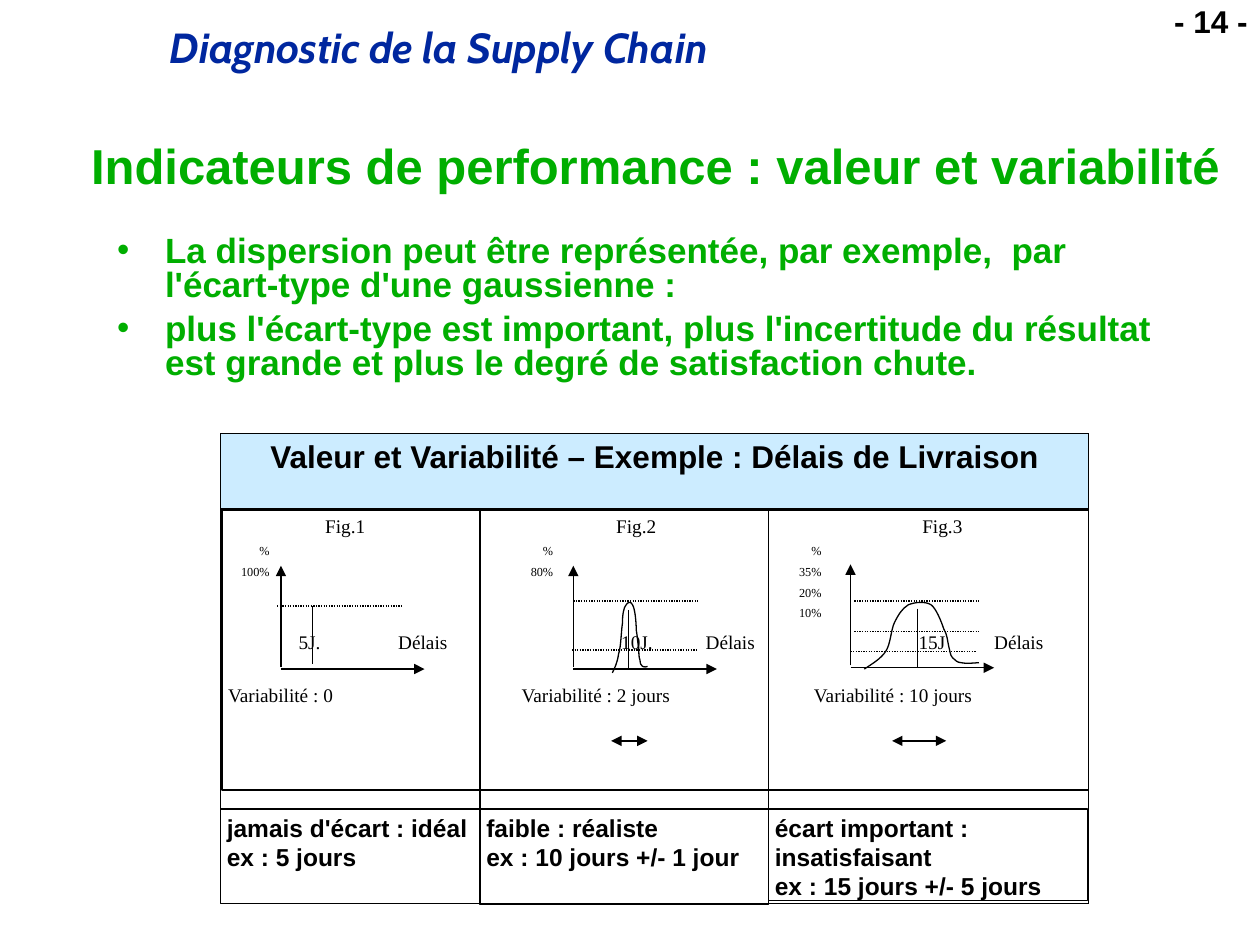
import pptx
import pptx.util
import pptx.dml.color
import pptx.enum.dml
import pptx.enum.shapes
import pptx.enum.text
from lxml import etree
from pptx.oxml.ns import qn

Inches, Pt = pptx.util.Inches, pptx.util.Pt
RGBColor = pptx.dml.color.RGBColor
ALIGN = pptx.enum.text.PP_ALIGN
ANCHOR = pptx.enum.text.MSO_ANCHOR

BLACK = RGBColor(0x00, 0x00, 0x00)
WHITE = RGBColor(0xFF, 0xFF, 0xFF)
NAVY = RGBColor(0x00, 0x27, 0x9F)
GREEN = RGBColor(0x00, 0xAE, 0x00)
PALE_BLUE = RGBColor(0xCC, 0xEC, 0xFF)

COURSE = "Diagnostic de la Supply Chain"
PAGE = "- 14 -"
TITLE = "Indicateurs de performance : valeur et variabilité"
POINTS = [
    "La dispersion peut être représentée, par exemple,  par l'écart-type d'une gaussienne :",
    "plus l'écart-type est important, plus l'incertitude du résultat "
    "est grande et plus le degré de satisfaction chute.",
]
PANEL_HEADING = "Valeur et Variabilité – Exemple : Délais de Livraison"

# Conclusions under each figure, with the height of their cell
CONCLUSIONS = [
    (["jamais d'écart : idéal", "ex : 5 jours"], 0.75),
    (["faible : réaliste", "ex : 10 jours +/- 1 jour"], 0.76),
    (["écart important : insatisfaisant", "ex : 15 jours +/- 5 jours"], 0.73),
]

# Rows of figure labels: text, size, space before, tab stops, tab alignment
PERCENT_TABS = [0.33, 2.58, 4.71]
LABEL_ROWS = [
    ("\tFig.1\tFig.2\tFig.3", 11, 0, [0.77, 3.08, 5.51], "l"),
    ("\t%\t%\t%", 7, 3.5, PERCENT_TABS, "r"),
    ("\t100%\t80%\t35%", 7, 3.5, PERCENT_TABS, "r"),
    ("\t20%", 7, 3.5, PERCENT_TABS[2:], "r"),
    ("\t10%", 7, 3.5, PERCENT_TABS[2:], "r"),
    ("\t5J.\tDélais\t10J.\tDélais\t15J\tDélais", 11, 5.5,
     [0.56, 1.35, 3.12, 3.79, 5.48, 6.08], "l"),
    ("Variabilité : 0\tVariabilité : 2 jours\tVariabilité : 10 jours", 11, 17.5, [2.33, 4.65], "l"),
]

# Bell curves: a start point, then Bézier triples
NARROW_BELL = [
    (4.86, 5.34), (4.88, 5.3), (4.9, 5.26), (4.91, 5.19), (4.93, 5.13), (4.93, 5.01),
    (4.94, 4.95), (4.94, 4.88), (4.95, 4.82), (4.97, 4.8), (4.98, 4.78), (5.01, 4.77),
    (5.02, 4.8), (5.04, 4.83), (5.05, 4.94), (5.05, 5), (5.06, 5.05), (5.06, 5.1),
    (5.07, 5.14), (5.07, 5.18), (5.07, 5.22), (5.08, 5.24), (5.08, 5.27), (5.09, 5.28),
    (5.1, 5.29), (5.11, 5.3), (5.13, 5.29), (5.14, 5.29),
]
WIDE_BELL = [
    (6.86, 5.31), (6.92, 5.27), (6.99, 5.23), (7.03, 5.17), (7.07, 5.11), (7.07, 5),
    (7.1, 4.94), (7.13, 4.88), (7.16, 4.83), (7.21, 4.8), (7.26, 4.78), (7.34, 4.77),
    (7.39, 4.8), (7.43, 4.83), (7.47, 4.93), (7.49, 4.99), (7.52, 5.04), (7.52, 5.09),
    (7.53, 5.13), (7.54, 5.16), (7.54, 5.2), (7.56, 5.22), (7.58, 5.24), (7.6, 5.26),
    (7.63, 5.26), (7.67, 5.27), (7.75, 5.26), (7.77, 5.26),
]
# Origin of the axes, peak (x, top), starts of the 1-inch dotted levels, bell, spread arrow
FIGURES = [
    dict(origin=(2.23, 5.31), peak=(2.48, 4.81), levels=[(2.2, 4.81)], bell=None, spread=None),
    dict(origin=(4.55, 5.31), peak=(4.99, 4.84), levels=[(4.55, 4.77), (4.54, 5.16)],
         bell=NARROW_BELL, spread=(4.85, 5.14)),
    dict(origin=(6.75, 5.3), peak=(7.28, 4.83),
         levels=[(6.78, 4.77), (6.75, 5.17), (6.78, 5.01)],
         bell=WIDE_BELL, spread=(7.08, 7.51)),
]

LEFT, RIGHT, TOP, BOTTOM = 1.75, 8.64, 3.44, 7.17
FIGURES_TOP, CONCLUSIONS_TOP = 4.04, 6.42
COLUMNS = [LEFT, 3.81, 6.1, 8.63]

prs = pptx.Presentation()
prs.slide_width, prs.slide_height = Inches(10), Inches(7.5)
slide = prs.slides.add_slide(prs.slide_layouts[1])
shapes = slide.shapes


def write(shape, lines, size, color=BLACK, font="Arial", bold=True, italic=False,
          align=ALIGN.LEFT, anchor=ANCHOR.TOP, spacing=1.0, before=0, margins=(0.1, 0.05),
          wrap=True):
    frame = shape.text_frame
    frame.auto_size = pptx.enum.text.MSO_AUTO_SIZE.NONE
    frame.word_wrap = wrap
    frame.vertical_anchor = anchor
    frame.margin_left = frame.margin_right = Inches(margins[0])
    frame.margin_top = frame.margin_bottom = Inches(margins[1])
    frame.text = "\n".join(lines)
    for paragraph in frame.paragraphs:
        paragraph.alignment = align
        paragraph.line_spacing = spacing
        paragraph.space_before = Pt(before)
        style = paragraph.runs[0].font
        style.name, style.size = font, Pt(size)
        style.bold, style.italic = bold, italic
        style.color.rgb = color
    return frame.paragraphs


def place(shape, *box):
    shape.left, shape.top, shape.width, shape.height = map(Inches, box)
    return shape


def draw_box(left, top, width, height, fill=None, weight=0.75):
    box = shapes.add_shape(pptx.enum.shapes.MSO_SHAPE.RECTANGLE,
                           *map(Inches, (left, top, width, height)))
    box.shadow.inherit = False
    if fill is None:
        box.fill.background()
    else:
        box.fill.solid()
        box.fill.fore_color.rgb = fill
    box.line.color.rgb = BLACK
    box.line.width = Pt(weight)
    return box


def draw_line(start, end, weight=0.75, dotted=False, arrows=()):
    """Arrows holds headEnd and/or tailEnd, in that order."""
    line = shapes.add_connector(pptx.enum.shapes.MSO_CONNECTOR.STRAIGHT,
                                *map(Inches, (*start, *end)))
    line.line.color.rgb = BLACK
    line.line.width = Pt(weight)
    if dotted:
        line.line.dash_style = pptx.enum.dml.MSO_LINE.ROUND_DOT
    properties = line._element.spPr
    for arrow in arrows:
        etree.SubElement(properties.find(qn("a:ln")), qn("a:" + arrow), type="triangle")
    etree.SubElement(properties, qn("a:effectLst"))


def draw_curve(points):
    """Build an outline through all points, then turn each three steps into one Bézier."""
    start, *rest = [(Inches(x), Inches(y)) for x, y in points]
    builder = shapes.build_freeform(*start)
    builder.add_line_segments(rest, close=False)
    curve = builder.convert_to_shape()
    steps = list(curve._element.iter(qn("a:lnTo")))
    for i in range(0, len(steps), 3):
        bezier = etree.SubElement(steps[i].getparent(), qn("a:cubicBezTo"))
        for step in steps[i:i + 3]:
            bezier.append(step[0])
            step.getparent().remove(step)
    curve.shadow.inherit = False
    curve.fill.background()
    curve.line.color.rgb = BLACK
    curve.line.width = Pt(0.75)


# Headings and bullets
write(shapes.add_textbox(*map(Inches, (1.25, 0.17, 8.08, 0.46))), [COURSE], 24,
      color=NAVY, font="Cabin", italic=True, spacing=0.9)
write(shapes.add_textbox(*map(Inches, (9.09, 0, 0.91, 0.37))), [PAGE], 18,
      align=ALIGN.RIGHT, spacing=0.9)
write(place(shapes.title, 0.33, 0.92, 9.45, 0.83), [TITLE], 28, color=GREEN,
      align=ALIGN.RIGHT, anchor=ANCHOR.MIDDLE, spacing=0.9)
for point in write(place(slide.placeholders[1], 0.83, 1.83, 8.5, 1.08), POINTS, 20,
                   color=GREEN, spacing=0.8, before=6):
    indents = point._p.get_or_add_pPr()
    indents.set("marL", str(Inches(0.38)))
    indents.set("indent", str(-Inches(0.38)))
    etree.SubElement(indents, qn("a:buChar"), char="•")

# Panel heading and conclusions
CELL_MARGINS = (0.05, 0.03)
write(draw_box(LEFT, TOP, RIGHT - LEFT, 0.6, PALE_BLUE), [PANEL_HEADING], 18,
      align=ALIGN.CENTER, margins=CELL_MARGINS)
for left, right, (lines, height) in zip(COLUMNS, COLUMNS[1:], CONCLUSIONS):
    write(draw_box(left, CONCLUSIONS_TOP, right - left, height, WHITE), lines, 14,
          margins=CELL_MARGINS)

# Panel rules
for x in COLUMNS[1:3]:
    draw_line((x, FIGURES_TOP), (x, CONCLUSIONS_TOP))
draw_line((LEFT, CONCLUSIONS_TOP), (COLUMNS[-1], CONCLUSIONS_TOP))
for y in (TOP, BOTTOM):
    draw_line((LEFT, y), (RIGHT, y), weight=1)
for x in (LEFT, RIGHT):
    draw_line((x, TOP), (x, BOTTOM), weight=1)

# Figures
for figure in FIGURES:
    x, y = figure["origin"]
    peak_x, peak_y = figure["peak"]
    draw_line((x, y - 0.02), (x, y - 0.82), arrows=["tailEnd"])
    draw_line((x, y), (x + 1.14, y), arrows=["tailEnd"])
    draw_line((peak_x, peak_y), (peak_x, peak_y + 0.46))
    for level_x, level_y in figure["levels"]:
        draw_line((level_x, level_y), (level_x + 1, level_y), dotted=True)
    if figure["bell"]:
        draw_curve(figure["bell"])
        start, end = figure["spread"]
        draw_line((start, 5.88), (end, 5.88), weight=1, arrows=["headEnd", "tailEnd"])

# Figure labels
labels = write(draw_box(1.76, 4.05, 6.88, 2.22, weight=1), [row[0] for row in LABEL_ROWS], 11,
               font="Times New Roman", bold=False, margins=CELL_MARGINS)
for label, (_, size, before, stops, side) in zip(labels, LABEL_ROWS):
    label.space_before = Pt(before)
    label.runs[0].font.size = Pt(size)
    tabs = etree.SubElement(label._p.get_or_add_pPr(), qn("a:tabLst"))
    for stop in stops:
        etree.SubElement(tabs, qn("a:tab"), pos=str(Inches(stop)), algn=side)

prs.save("out.pptx")
